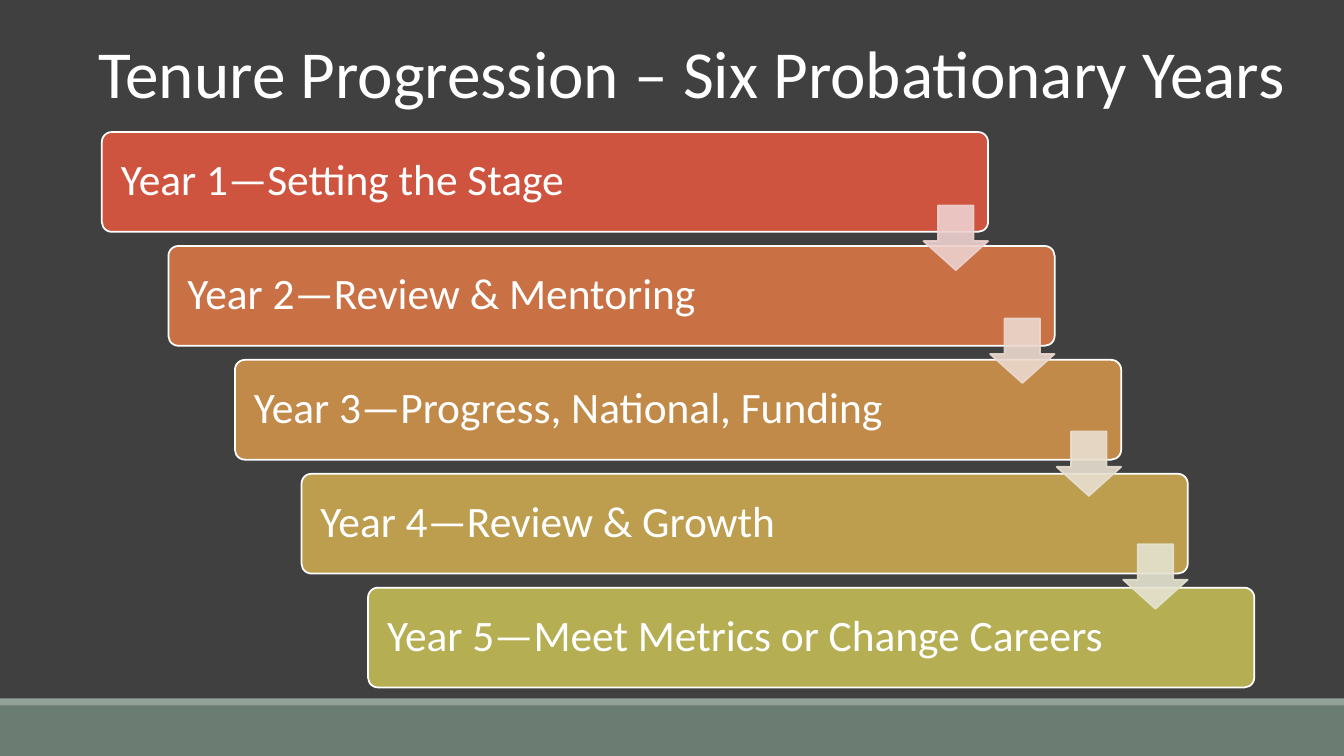
import pptx
import pptx.util
import pptx.dml.color
import pptx.enum.shapes
import pptx.enum.text
import lxml.etree
from pptx.util import Inches

COLORS = {
    "background": "404040",
    "white": "FFFFFF",
    "footer": "6B7D72",
    "footer_edge": "93A299",
}
# Label, bar colour, colour of the arrow leading to the next bar
YEARS = [
    ("Year 1—Setting the Stage", "CF543F", "EDD1CF"),
    ("Year 2—Review & Mentoring", "C97144", "EBD9CF"),
    ("Year 3—Progress, National, Funding", "C28A49", "E8DFD0"),
    ("Year 4—Review & Growth", "BC9E4E", "E5E3D1"),
    ("Year 5—Meet Metrics or Change Careers", "B5AE53", None),
]
SHAPES = pptx.enum.shapes.MSO_SHAPE
BAR_LEFT, BAR_TOP, BAR_WIDTH, BAR_HEIGHT = 1.01, 1.31, 8.79, 0.99
STEP_X, STEP_Y = 0.66, 1.13
ARROW_SIZE, ARROW_TOP, ARROW_STEP_Y = 0.64, 2.04, 1.12


def add_filled(kind, left, top, width, height, fill, line=None):
    shape = slide.shapes.add_shape(
        kind, Inches(left), Inches(top), Inches(width), Inches(height))
    shape.shadow.inherit = False
    shape.fill.solid()
    shape.fill.fore_color.rgb = pptx.dml.color.RGBColor.from_string(fill)
    if line:
        shape.line.color.rgb = pptx.dml.color.RGBColor.from_string(line)
        shape.line.width = pptx.util.Pt(1.25)
    else:
        shape.line.fill.background()
    return shape


def add_white_run(paragraph, text, size):
    paragraph.alignment = pptx.enum.text.PP_ALIGN.LEFT
    run = paragraph.add_run()
    run.text = text
    run.font.name = "Calibri"
    run.font.size = pptx.util.Pt(size)
    run.font.color.rgb = pptx.dml.color.RGBColor.from_string(COLORS["white"])


presentation = pptx.Presentation()
presentation.slide_width = Inches(13.33)
presentation.slide_height = Inches(7.5)
slide = presentation.slides.add_slide(presentation.slide_layouts[5])
slide.background.fill.solid()
slide.background.fill.fore_color.rgb = pptx.dml.color.RGBColor.from_string(
    COLORS["background"])

title = slide.shapes.title
title.left, title.top = Inches(0.88), Inches(0.26)
title.width, title.height = Inches(12.07), Inches(0.91)
title.text_frame.vertical_anchor = pptx.enum.text.MSO_ANCHOR.TOP
title.text_frame.auto_size = pptx.enum.text.MSO_AUTO_SIZE.NONE
add_white_run(title.text_frame.paragraphs[0],
              "Tenure Progression – Six Probationary Years", 48)

add_filled(SHAPES.RECTANGLE, 0, 7, 13.33, 0.5, COLORS["footer"])
add_filled(SHAPES.RECTANGLE, 0, 6.93, 13.33, 0.07, COLORS["footer_edge"])

for index, (label, bar_color, _) in enumerate(YEARS):
    bar = add_filled(SHAPES.ROUNDED_RECTANGLE,
                     BAR_LEFT + index * STEP_X, BAR_TOP + index * STEP_Y,
                     BAR_WIDTH, BAR_HEIGHT, bar_color, COLORS["white"])
    bar.adjustments[0] = 0.1
    frame = bar.text_frame
    frame.word_wrap = True
    frame.vertical_anchor = pptx.enum.text.MSO_ANCHOR.MIDDLE
    frame.margin_left = Inches(0.16)
    frame.margin_right = Inches(0.16)
    frame.paragraphs[0].line_spacing = 0.9
    add_white_run(frame.paragraphs[0], label, 31)

# Each arrow is flush with the right end of the bar it leaves
for index, (_, _, arrow_color) in enumerate(YEARS[:-1]):
    arrow = add_filled(SHAPES.DOWN_ARROW,
                       BAR_LEFT + BAR_WIDTH - ARROW_SIZE + index * STEP_X,
                       ARROW_TOP + index * ARROW_STEP_Y,
                       ARROW_SIZE, ARROW_SIZE, arrow_color, arrow_color)
    arrow.adjustments[0] = 0.55
    arrow.adjustments[1] = 0.45
    for color in arrow.element.spPr.iter(pptx.oxml.ns.qn("a:srgbClr")):
        lxml.etree.SubElement(color, pptx.oxml.ns.qn("a:alpha"), val="90000")

presentation.save("out.pptx")
